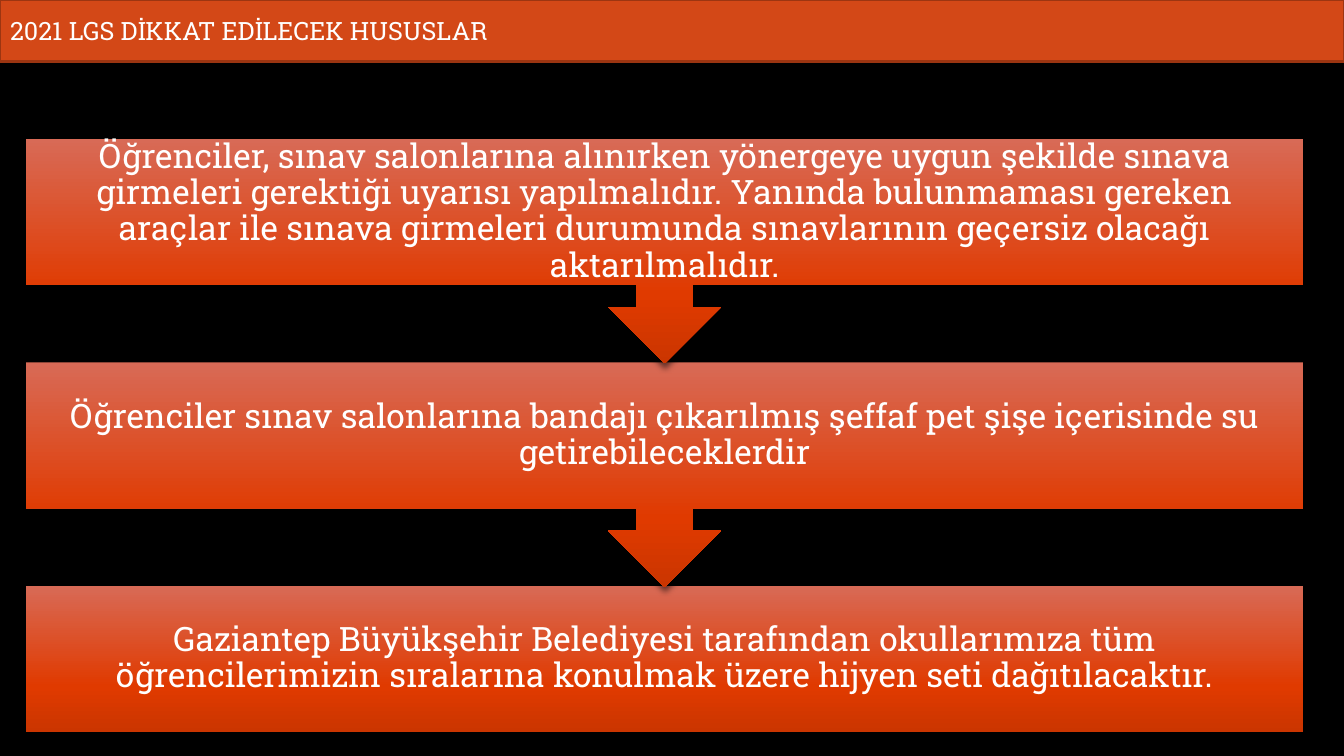
from lxml import etree
from pptx import Presentation
from pptx import util as u
from pptx.dml.color import RGBColor
from pptx.enum import shapes, text
from pptx.oxml.ns import qn


def color(value):
    return RGBColor.from_string(value)


def write(shape, wording, size, alignment):
    frame = shape.text_frame
    frame.word_wrap = True
    frame.auto_size = text.MSO_AUTO_SIZE.NONE
    frame.vertical_anchor = text.MSO_ANCHOR.MIDDLE
    paragraph = frame.paragraphs[0]
    paragraph.alignment = alignment
    run = paragraph.add_run()
    run.text = wording
    run.font.name = "Roboto Slab"
    run.font.size = u.Pt(size)
    run.font.color.rgb = color("FFFFFF")
    return frame


presentation = Presentation()
presentation.slide_width = u.Cm(33.87)
presentation.slide_height = u.Cm(19.05)
slide = presentation.slides.add_slide(presentation.slide_layouts[5])
slide.background.fill.solid()
slide.background.fill.fore_color.rgb = color("000000")

# Title bar
title = slide.shapes.title
title.left, title.top = u.Cm(0), u.Cm(0)
title.width, title.height = presentation.slide_width, u.Cm(1.55)
title.fill.solid()
title.fill.fore_color.rgb = color("D34817")
title.line.color.rgb = color("9C3511")
title.line.width = u.Pt(1.5)
write(title, "2021 LGS DİKKAT EDİLECEK HUSUSLAR", 18, text.PP_ALIGN.LEFT)

# Steps, drawn from the last to the first so each arrow overlaps the next box
steps = [
    "Öğrenciler, sınav salonlarına alınırken yönergeye uygun şekilde sınava "
    "girmeleri gerektiği uyarısı yapılmalıdır. Yanında bulunmaması gereken "
    "araçlar ile sınava girmeleri durumunda sınavlarının geçersiz olacağı "
    "aktarılmalıdır.",
    "Öğrenciler sınav salonlarına bandajı çıkarılmış şeffaf pet şişe "
    "içerisinde su getirebileceklerdir",
    "Gaziantep Büyükşehir Belediyesi tarafından okullarımıza tüm "
    "öğrencilerimizin sıralarına konulmak üzere hijyen seti dağıtılacaktır.",
]
gradient_stops = [(0, "D86A56"), (69, "E03A00"), (100, "CB3500")]
first_top, pitch = 3.5, 5.63
last = len(steps) - 1

for index in range(last, -1, -1):
    if index == last:
        kind, height = shapes.MSO_SHAPE.RECTANGLE, 3.68
    else:
        kind, height = shapes.MSO_SHAPE.DOWN_ARROW_CALLOUT, 5.66
    step = slide.shapes.add_shape(
        kind, u.Cm(0.66), u.Cm(first_top + index * pitch), u.Cm(32.18), u.Cm(height))
    step.line.fill.background()

    # Three-stop gradient, light at the top
    step.fill.gradient()
    step.fill.gradient_angle = 270
    stop_list = step.element.spPr.find(".//" + qn("a:gsLst"))
    for stop in list(stop_list):
        stop_list.remove(stop)
    for position, value in gradient_stops:
        stop = etree.SubElement(stop_list, qn("a:gs"), pos=str(position * 1000))
        etree.SubElement(stop, qn("a:srgbClr"), val=value)

    # Soft shadow below
    step.shadow.inherit = False
    effects = step.element.spPr.find(qn("a:effectLst"))
    shadow = etree.SubElement(
        effects, qn("a:outerShdw"), blurRad=str(u.Pt(4)), dist=str(u.Pt(3)),
        dir="5400000", rotWithShape="0")
    shadow_color = etree.SubElement(shadow, qn("a:srgbClr"), val="000000")
    etree.SubElement(shadow_color, qn("a:alpha"), val="54000")

    # Step text
    frame = write(step, steps[index], 24, text.PP_ALIGN.CENTER)
    frame.paragraphs[0].line_spacing = 0.9
    frame.margin_left = frame.margin_right = u.Cm(0.48)
    frame.margin_top = frame.margin_bottom = u.Cm(0.48)

presentation.save("out.pptx")
